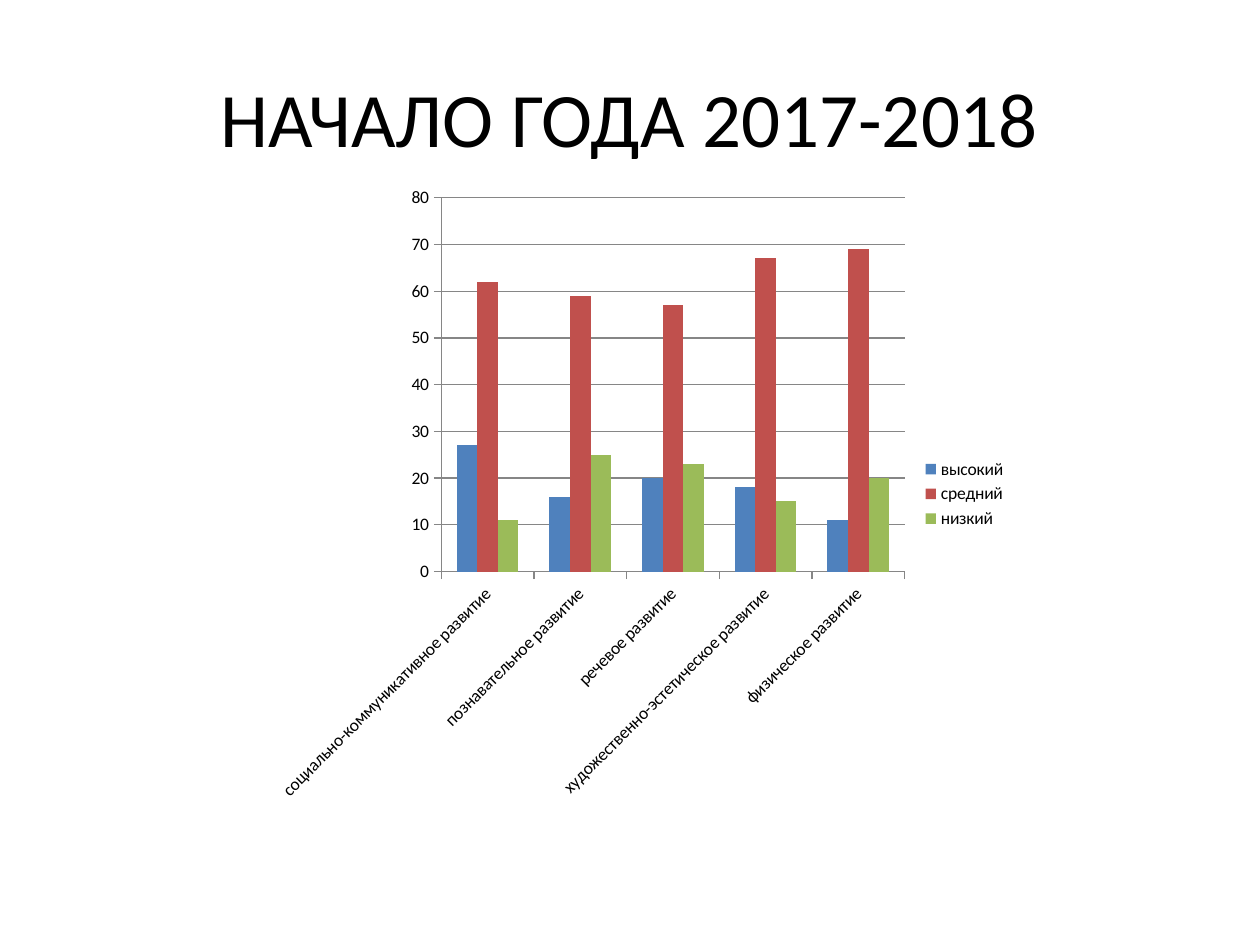
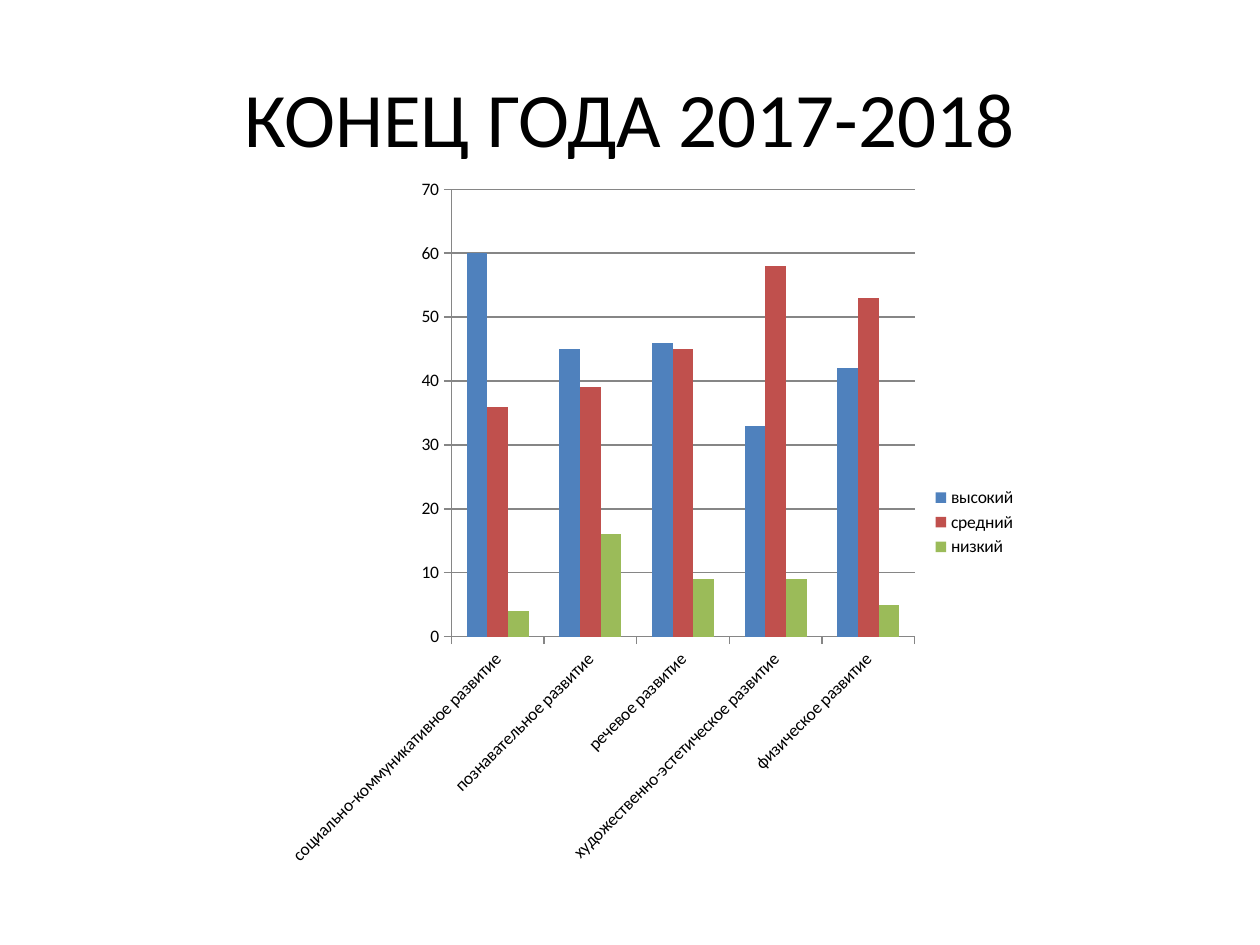
"""Build two slides comparing children's development levels over a school year."""
from pptx import Presentation
from pptx.chart.data import CategoryChartData
from pptx.dml.color import RGBColor
from pptx.enum.chart import XL_CHART_TYPE, XL_LEGEND_POSITION, XL_TICK_MARK
from pptx.enum.text import MSO_ANCHOR, PP_ALIGN
from pptx.util import Inches, Pt

WIDTH, HEIGHT = Inches(10), Inches(7.5)
FONT = "Calibri"
COLORS = {
    "text": "000000",
    "axis": "868686",
    "высокий": "4F81BD",
    "средний": "C0504D",
    "низкий": "9BBB59",
}
AREAS = [
    "социально-коммуникативное развитие",
    "познавательное развитие",
    "речевое развитие",
    "художественно-эстетическое развитие",
    "физическое развитие",
]
PERIODS = [
    {
        "title": "НАЧАЛО ГОДА 2017-2018",
        "top": 1.39, "left": 2.09, "height": 5.06,
        "levels": {
            "высокий": (27, 16, 20, 18, 11),
            "средний": (62, 59, 57, 67, 69),
            "низкий": (11, 25, 23, 15, 20),
        },
    },
    {
        "title": "КОНЕЦ ГОДА 2017-2018",
        "top": 1.31, "left": 2.17, "height": 5.67,
        "levels": {
            "высокий": (60, 45, 46, 33, 42),
            "средний": (36, 39, 45, 58, 53),
            "низкий": (4, 16, 9, 9, 5),
        },
    },
]


def color(name):
    """Return the named palette colour."""
    return RGBColor.from_string(COLORS[name])


def style_font(font, size):
    """Apply the shared typeface and text colour at the given size."""
    font.name = FONT
    font.size = Pt(size)
    font.color.rgb = color("text")


def style_line(line):
    """Give an axis or grid line its thin grey stroke."""
    line.color.rgb = color("axis")
    line.width = Pt(0.75)


def add_title(slide, wording):
    """Add the centred heading across the top of the slide."""
    heading = slide.shapes.add_textbox(
        int(WIDTH * 0.05), int(HEIGHT * 0.04), int(WIDTH * 0.9), Inches(1.25))
    frame = heading.text_frame
    frame.word_wrap = True
    frame.vertical_anchor = MSO_ANCHOR.MIDDLE
    paragraph = frame.paragraphs[0]
    paragraph.alignment = PP_ALIGN.CENTER
    run = paragraph.add_run()
    run.text = wording
    style_font(run.font, 44)


def style_axes(chart):
    """Set ticks, lines and slanted category labels."""
    for axis in (chart.category_axis, chart.value_axis):
        axis.major_tick_mark = XL_TICK_MARK.OUTSIDE
        axis.minor_tick_mark = XL_TICK_MARK.NONE
        style_line(axis.format.line)
        style_font(axis.tick_labels.font, 10)
    chart.value_axis.has_major_gridlines = True
    style_line(chart.value_axis.major_gridlines.format.line)
    labels = chart.category_axis.tick_labels.font
    labels._element.getparent().getparent().getparent().bodyPr.set("rot", "-2700000")


def add_levels_chart(slide, period):
    """Add the clustered columns of one period."""
    levels = CategoryChartData(number_format="General")
    levels.categories = AREAS
    for level, shares in period["levels"].items():
        levels.add_series(level, shares)
    chart = slide.shapes.add_chart(
        XL_CHART_TYPE.COLUMN_CLUSTERED, Inches(period["left"]),
        Inches(period["top"]), int(WIDTH * 0.6), Inches(period["height"]),
        levels).chart
    style_font(chart.font, 10)
    chart.has_title = False
    chart.has_legend = True
    chart.legend.position = XL_LEGEND_POSITION.RIGHT
    chart.legend.include_in_layout = False
    style_font(chart.legend.font, 10)
    style_axes(chart)
    plot = chart.plots[0]
    plot.gap_width = 150
    plot.overlap = 0
    plot.vary_by_categories = False
    for columns in plot.series:
        columns.format.fill.solid()
        columns.format.fill.fore_color.rgb = color(columns.name)


def main():
    """Build and save the presentation."""
    deck = Presentation()
    deck.slide_width, deck.slide_height = WIDTH, HEIGHT
    for period in PERIODS:
        slide = deck.slides.add_slide(deck.slide_layouts[6])
        add_levels_chart(slide, period)
        add_title(slide, period["title"])
    deck.save("out.pptx")


if __name__ == "__main__":
    main()
